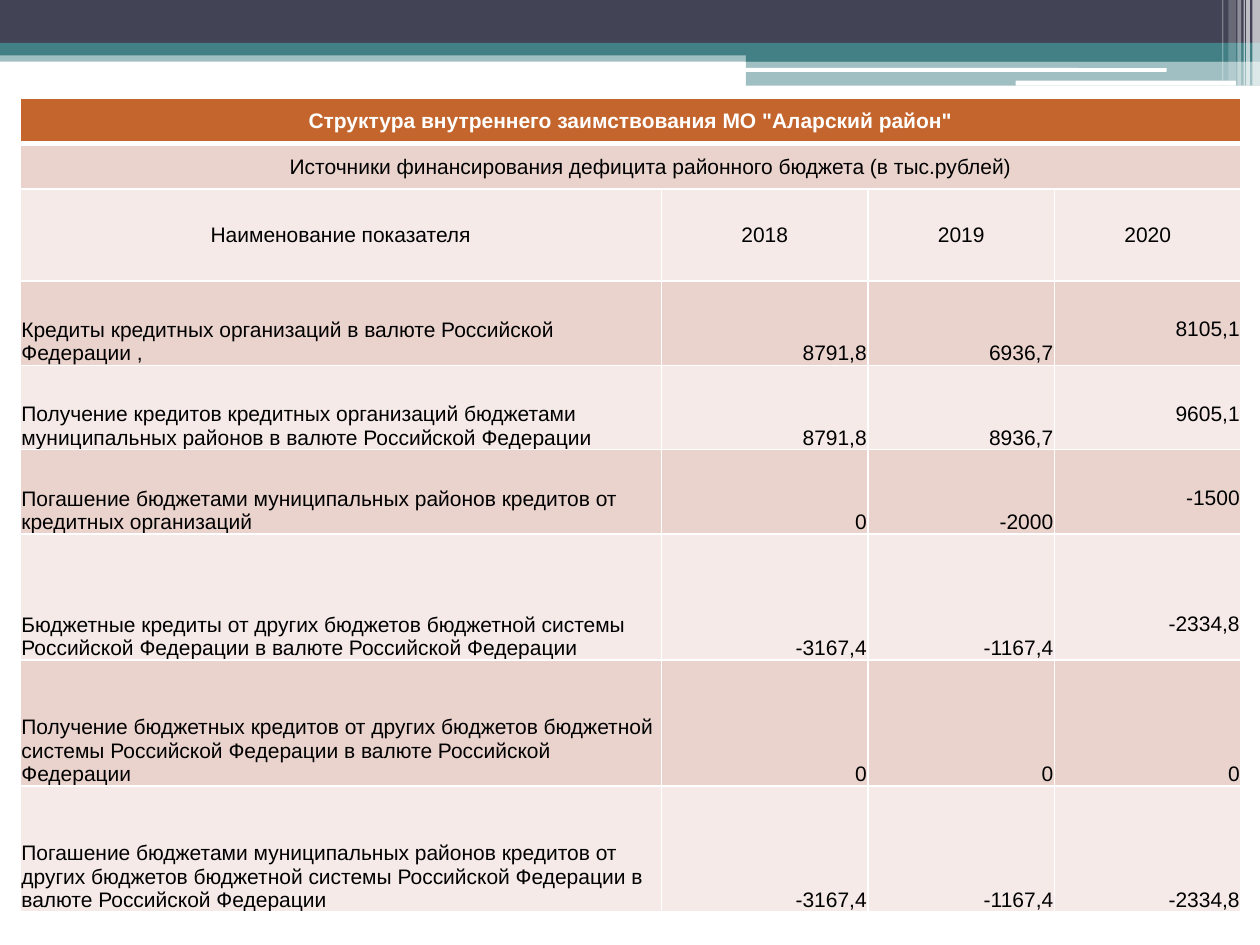
from dataclasses import dataclass
from lxml.etree import SubElement as Sub
from pptx import Presentation
from pptx.dml.color import RGBColor as Rgb
from pptx.enum.shapes import MSO_SHAPE as Form
from pptx.enum.text import MSO_ANCHOR as Anchor, PP_ALIGN as Align
from pptx.oxml import parse_xml
from pptx.oxml.ns import nsdecls, qn
from pptx.util import Inches, Pt


@dataclass(frozen=True)
class Theme:
    dark: str = "424456"
    teal: str = "438086"
    white: str = "FFFFFF"
    black: str = "000000"
    head: str = "C4652D"
    odd: str = "EAD3CD"
    even: str = "F5EAE8"
    font: str = "Arial"
    size: int = 12
    line: int = 1
    thick: int = 3


@dataclass(frozen=True)
class Bar:
    left: float
    top: float
    width: float
    height: float
    color: str
    alpha: int = 100
    form: Form = Form.RECTANGLE


@dataclass(frozen=True)
class Style:
    fill: str
    color: str = Theme.black
    bold: bool = False
    align: Align = Align.CENTER
    anchor: Anchor = Anchor.MIDDLE
    left: float = 0.01
    base: float = 0
    top_line: int = Theme.line
    low_line: int = Theme.line


@dataclass(frozen=True)
class Item:
    name: str
    sums: tuple[str, str, str]
    lift: bool = False  # last sum sits one text line higher


T = Theme()
ROUND = Form.ROUNDED_RECTANGLE
LIFT = 0.19

BARS = [
    # Bands across the top
    Bar(0, 0.4, 10, 0.09, T.teal, 50),
    Bar(0, 0, 10, 0.34, T.dark),
    Bar(0, 0.34, 10, 0.1, T.teal),
    Bar(5.92, 0.39, 4.08, 0.1, T.teal),
    Bar(5.92, 0.48, 4.08, 0.2, T.teal, 50),
    # White strips
    Bar(5.91, 0.54, 3.35, 0.03, T.white, form=ROUND),
    Bar(8.06, 0.64, 1.75, 0.04, T.white, form=ROUND),
    # Pale stripes at the right edge
    Bar(9.94, 0, 0.06, 0.68, T.white, 65),
    Bar(9.89, 0, 0.03, 0.68, T.white, 65),
    Bar(9.87, 0, 0.01, 0.68, T.white, 60),
    Bar(9.82, 0, 0.03, 0.68, T.white, 40),
    Bar(9.75, 0, 0.06, 0.64, T.white, 20),
    Bar(9.7, 0, 0.01, 0.64, T.white, 30),
]

COLS = [5.09, 1.64, 1.48, 1.48]
ROWS = [0.36] * 2 + [0.73] + [0.67] * 3 + [1] * 3
TITLE = 'Структура внутреннего заимствования МО "Аларский район"'
UNITS = "Источники финансирования дефицита районного бюджета (в тыс.рублей)"
HEADS = ["Наименование показателя", "2018", "2019", "2020"]
ITEMS = [
    Item("Кредиты кредитных организаций в валюте Российской Федерации ,",
         ("8791,8", "6936,7", "8105,1"), True),
    Item("Получение кредитов кредитных организаций бюджетами "
         "муниципальных районов в валюте Российской Федерации",
         ("8791,8", "8936,7", "9605,1"), True),
    Item("Погашение бюджетами муниципальных районов кредитов от "
         "кредитных организаций", ("0", "-2000", "-1500"), True),
    Item("Бюджетные кредиты от других бюджетов бюджетной системы "
         "Российской Федерации в валюте Российской Федерации",
         ("-3167,4", "-1167,4", "-2334,8"), True),
    Item("Получение бюджетных кредитов от других бюджетов бюджетной "
         "системы Российской Федерации в валюте Российской Федерации",
         ("0", "0", "0")),
    Item("Погашение бюджетами муниципальных районов кредитов от "
         "других бюджетов бюджетной системы Российской Федерации в "
         "валюте Российской Федерации", ("-3167,4", "-1167,4", "-2334,8")),
]


def draw_bar(slide, bar: Bar) -> None:
    shape = slide.shapes.add_shape(
        bar.form, Inches(bar.left), Inches(bar.top),
        Inches(bar.width), Inches(bar.height))
    shape.shadow.inherit = False
    shape.line.fill.background()
    shape.fill.solid()
    shape.fill.fore_color.rgb = Rgb.from_string(bar.color)
    if bar.alpha < 100:
        tone = shape.fill._xPr.find(qn("a:solidFill"))[0]
        Sub(tone, qn("a:alpha")).set("val", str(bar.alpha * 1000))


def paint(cell, style: Style) -> None:
    cell.fill.solid()
    cell.fill.fore_color.rgb = Rgb.from_string(style.fill)
    sides = {"L": T.line, "R": T.line,
             "T": style.top_line, "B": style.low_line}
    for spot, (side, width) in enumerate(sides.items()):
        edge = parse_xml(
            f'<a:ln{side} {nsdecls("a")} w="{Pt(width)}"><a:solidFill>'
            f'<a:srgbClr val="{T.white}"/></a:solidFill></a:ln{side}>')
        cell._tc.get_or_add_tcPr().insert(spot, edge)


def write(cell, text: str, style: Style) -> None:
    cell.margin_left = Inches(style.left)
    cell.margin_right = cell.margin_top = Inches(0.01)
    cell.margin_bottom = Inches(style.base)
    cell.vertical_anchor = style.anchor
    para = cell.text_frame.paragraphs[0]
    para.alignment = style.align
    run = para.add_run()
    run.text = text
    font = run.font
    font.name, font.size, font.bold = T.font, Pt(T.size), style.bold
    font.color.rgb = Rgb.from_string(style.color)


def fill_wide(table, row: int, text: str, style: Style) -> None:
    for cell in table.rows[row].cells:
        paint(cell, style)
    first = table.cell(row, 0)
    first.merge(table.cell(row, len(COLS) - 1))
    write(first, text, style)


def fill_item(table, row: int, item: Item) -> None:
    tint = T.odd if row % 2 else T.even
    for col, text in enumerate([item.name, *item.sums]):
        last = col == len(COLS) - 1
        style = Style(tint, align=Align.RIGHT if col else Align.LEFT,
                      anchor=Anchor.BOTTOM,
                      base=LIFT if item.lift and last else 0)
        paint(table.cell(row, col), style)
        write(table.cell(row, col), text, style)


def draw_table(slide) -> None:
    table = slide.shapes.add_table(
        len(ROWS), len(COLS), Inches(0.16), Inches(0.78),
        Inches(sum(COLS)), Inches(sum(ROWS))).table
    for col, width in zip(table.columns, COLS):
        col.width = Inches(width)
    for row, height in zip(table.rows, ROWS):
        row.height = Inches(height)

    # Heading rows
    fill_wide(table, 0, TITLE,
              Style(T.head, T.white, bold=True, low_line=T.thick))
    fill_wide(table, 1, UNITS, Style(T.odd, left=0.33, top_line=T.thick))
    for col, text in enumerate(HEADS):
        paint(table.cell(2, col), Style(T.even))
        write(table.cell(2, col), text, Style(T.even))

    # Budget rows
    for row, item in enumerate(ITEMS, 3):
        fill_item(table, row, item)


def main() -> None:
    deck = Presentation()
    deck.slide_width, deck.slide_height = Inches(10), Inches(7.5)
    slide = deck.slides.add_slide(deck.slide_layouts[6])
    for bar in BARS:
        draw_bar(slide, bar)
    draw_table(slide)
    deck.save("out.pptx")


if __name__ == "__main__":
    main()
